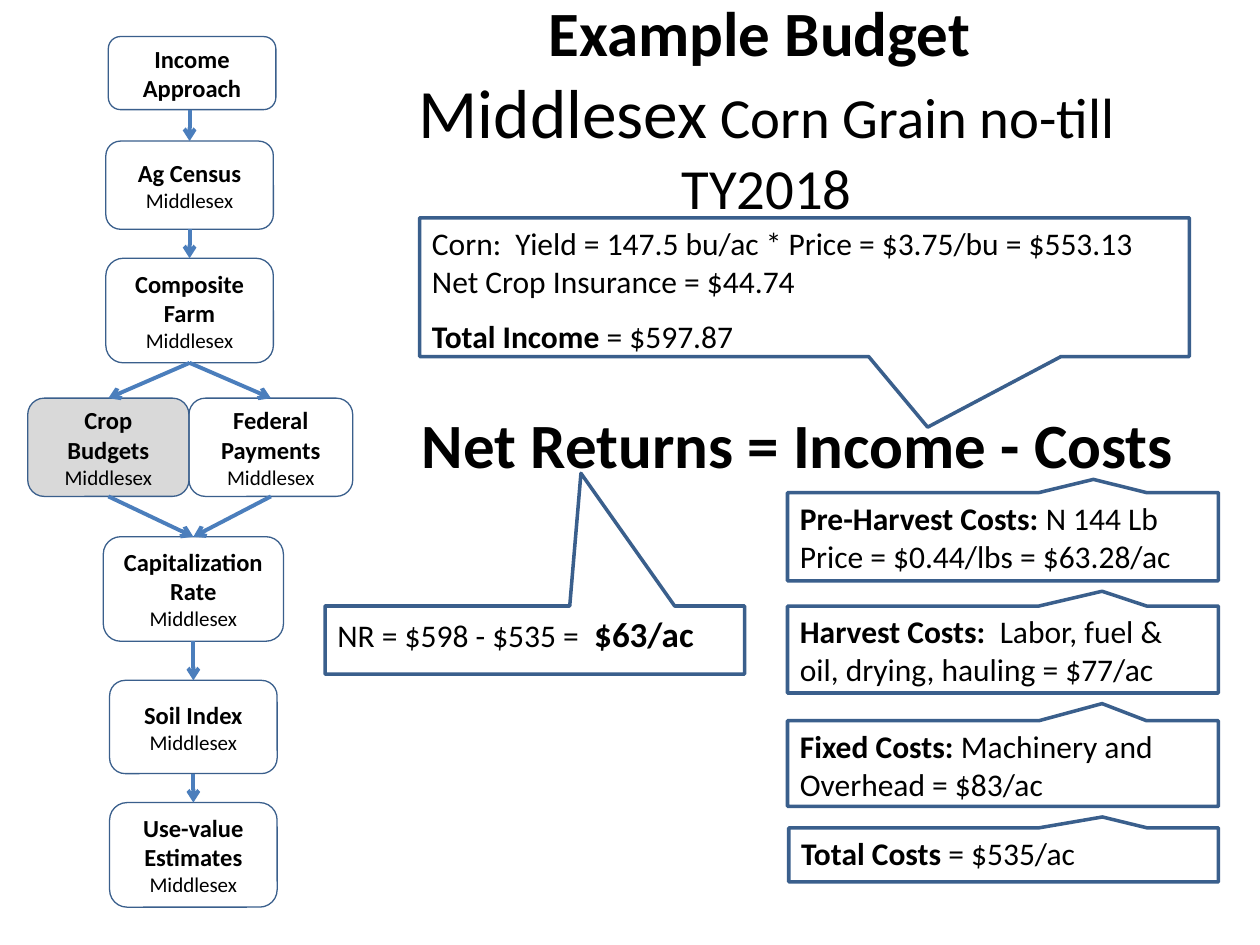
from pptx import Presentation
from pptx.dml.color import RGBColor as RGB
from pptx.enum.shapes import MSO_CONNECTOR as Conn, MSO_SHAPE as Shape
from pptx.enum.text import MSO_ANCHOR as Anchor, MSO_AUTO_SIZE as Auto, PP_ALIGN as Align
from pptx.oxml.ns import qn
from pptx.util import Inches, Pt
from lxml.etree import SubElement

HUES = {"edge": "3A5F8C", "arrow": "4B7EBC", "text": "000000", "grey": "D9D9D9"}
FONT = "Calibri"
COUNTY = "Middlesex"

STEPS = {
    "Income Approach": (0.86, 0.29, 1.33, 0.58),
    "Ag Census": (0.84, 1.12, 1.33, 0.7),
    "Composite Farm": (0.84, 2.05, 1.33, 0.83),
    "Crop Budgets": (0.22, 3.16, 1.28, 0.78),
    "Federal Payments": (1.5, 3.16, 1.3, 0.78),
    "Capitalization Rate": (0.82, 4.26, 1.43, 0.83),
    "Soil Index": (0.87, 5.4, 1.33, 0.74),
    "Use-value Estimates": (0.87, 6.37, 1.33, 0.83),
}
LINKS = [
    ("Income Approach", "Ag Census"),
    ("Ag Census", "Composite Farm"),
    ("Composite Farm", "Crop Budgets"),
    ("Composite Farm", "Federal Payments"),
    ("Crop Budgets", "Capitalization Rate"),
    ("Federal Payments", "Capitalization Rate"),
    ("Capitalization Rate", "Soil Index"),
    ("Soil Index", "Use-value Estimates"),
]
HEAD = [("Example Budget ", 36, True), (COUNTY, 39.6, False),
        (" Corn Grain no-till TY2018", 32.4, False)]
NOTES = [
    ((3.33, 1.73, 6.11, 1.1), (0.16, 1.01), [
        [("Corn:  Yield = 147.5 bu/ac * Price = $3.75/bu = $553.13", 18, False)],
        [("Net Crop Insurance = $44.74", 18, False)],
        [("Total Income ", 18, True), ("= $597.87", 18, False)]]),
    ((6.25, 3.91, 3.42, 0.7), (0.21, -0.65), [
        [("Pre-Harvest Costs: ", 18, True), ("N 144 Lb", 18, False)],
        [("Price = $0.44/lbs = $63.28/ac", 18, False)]]),
    ((6.25, 4.81, 3.42, 0.69), (0.23, -0.67), [
        [("Harvest Costs:  ", 18, True),
         ("Labor, fuel & oil, drying, hauling = $77/ac", 18, False)]]),
    ((6.25, 5.72, 3.42, 0.68), (0.23, -0.7), [
        [("Fixed Costs: ", 18, True), ("Machinery and Overhead = $83/ac", 18, False)]]),
    ((6.26, 6.57, 3.41, 0.43), (0.23, -0.7), [
        [("Total Costs ", 18, True), ("= $535/ac", 18, False)]]),
    ((2.58, 4.81, 3.33, 0.54), (0.11, -2.45), [
        [("NR = $598 - $535 = ", 18, False), (" $63/ac", 20, True)]]),
]


def hue(name):
    return RGB.from_string(HUES[name])


def add_run(para, text, size, bold):
    run = para.add_run()
    run.text = text
    font = run.font
    font.name, font.size, font.bold = FONT, Pt(size), bold
    font.color.rgb = hue("text")


def write(frame, paras, align):
    for i, runs in enumerate(paras):
        para = frame.add_paragraph() if i else frame.paragraphs[0]
        para.alignment = align
        for run in runs:
            add_run(para, *run)


def add_box(kind, area, width, fill=None):
    box = slide.shapes.add_shape(kind, *map(Inches, area))
    box.shadow.inherit = False
    if fill:
        box.fill.solid()
        box.fill.fore_color.rgb = hue(fill)
    else:
        box.fill.background()
    box.line.color.rgb = hue("edge")
    box.line.width = Pt(width)
    box.text_frame.word_wrap = True
    return box


def add_link(start, end):
    x, y, w, h = STEPS[start]
    left, top, wide, _ = STEPS[end]
    x1, x2 = x + w / 2, left + wide / 2
    if abs(x1 - x2) < 0.1:
        x1 = x2
    line = slide.shapes.add_connector(
        Conn.STRAIGHT, *map(Inches, (x1, y + h, x2, top)))
    line.line.color.rgb = hue("arrow")
    line.line.width = Pt(2.25)
    SubElement(line.line._get_or_add_ln(), qn("a:tailEnd"), type="arrow")
    SubElement(line._element.spPr, qn("a:effectLst"))


deck = Presentation()
deck.slide_width, deck.slide_height = Inches(10), Inches(7.5)
slide = deck.slides.add_slide(deck.slide_layouts[5])

title = slide.shapes.title
title.left, title.top, title.width, title.height = map(Inches, (2.67, 0.29, 6.83, 1.12))
frame = title.text_frame
frame.auto_size = Auto.NONE
frame.vertical_anchor = Anchor.MIDDLE
write(frame, [HEAD[:1]], Align.CENTER)
frame.paragraphs[0].add_line_break()
for part in HEAD[1:]:
    add_run(frame.paragraphs[0], *part)

for name, area in STEPS.items():
    fill = "grey" if name == "Crop Budgets" else None
    box = add_box(Shape.FLOWCHART_ALTERNATE_PROCESS, area, 0.75, fill)
    box.text_frame.vertical_anchor = Anchor.MIDDLE
    paras = [[(name, 14, True)]]
    if name != "Income Approach":
        paras.append([(COUNTY, 12, False)])
    write(box.text_frame, paras, Align.CENTER)

for link in LINKS:
    add_link(*link)

sum_box = slide.shapes.add_textbox(*map(Inches, (3.25, 3.17, 6.23, 0.71)))
sum_box.text_frame.word_wrap = False
sum_box.text_frame.auto_size = Auto.SHAPE_TO_FIT_TEXT
write(sum_box.text_frame, [[("Net Returns = Income - Costs", 36, True)]], Align.LEFT)

for area, tip, paras in NOTES:
    note = add_box(Shape.RECTANGULAR_CALLOUT, area, 2)
    note.adjustments[0], note.adjustments[1] = tip
    note.text_frame.vertical_anchor = Anchor.TOP
    write(note.text_frame, paras, Align.LEFT)
    if len(paras) == 3:
        note.text_frame.paragraphs[2].space_before = Pt(10)

deck.save("out.pptx")
